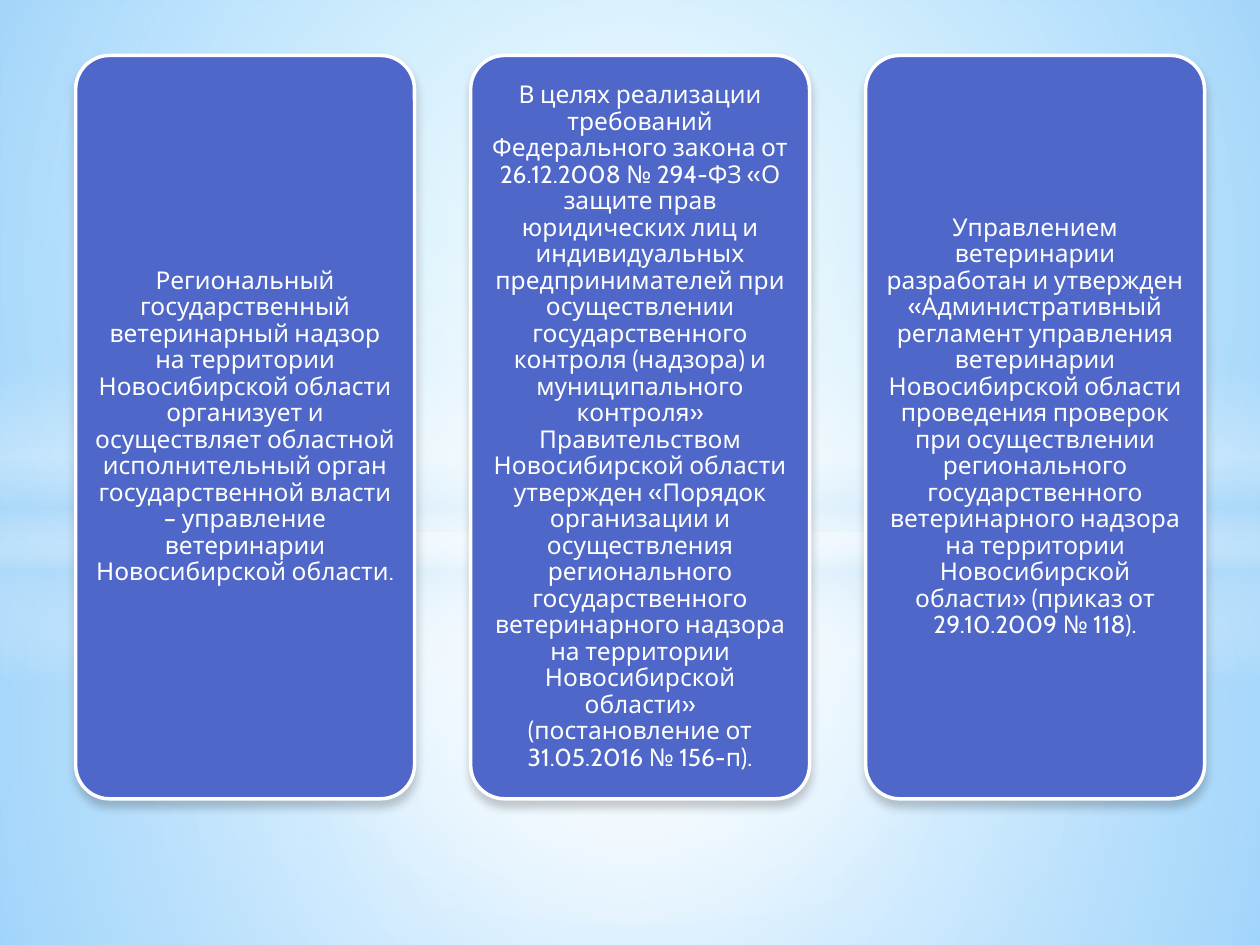
from lxml import etree
from pptx import Presentation
from pptx.dml.color import RGBColor
from pptx.enum import shapes, text
from pptx.oxml import ns
from pptx.util import Inches, Pt

WHITE = RGBColor(0xFF, 0xFF, 0xFF)
PALE = RGBColor(0xB4, 0xDC, 0xFA)
SKY_LIGHT = RGBColor(0x9E, 0xE0, 0xF8)
SKY = RGBColor(0x5B, 0xB9, 0xFF)
INDIGO = RGBColor(0x4E, 0x67, 0xC8)
BLACK = RGBColor(0, 0, 0)
CENTRE = (50, 50, 50, 50)


def add_node(parent, tag, **attributes):
    values = {name: str(value) for name, value in attributes.items()}
    return etree.SubElement(parent, ns.qn(tag), values)


def paint_gradient(owner, stops, focus=None):
    solid = next(owner.element.iter(ns.qn("a:solidFill")))
    holder = solid.getparent()
    gradient = add_node(holder, "a:gradFill", rotWithShape=1)
    holder.replace(solid, gradient)
    stop_list = add_node(gradient, "a:gsLst")
    for position, color, opacity in stops:
        stop = add_node(stop_list, "a:gs", pos=position * 1000)
        tint = add_node(stop, "a:srgbClr", val=color)
        if opacity < 100:
            add_node(tint, "a:alpha", val=opacity * 1000)
    if focus:
        circle = add_node(gradient, "a:path", path="circle")
        sides = {side: value * 1000 for side, value in zip("ltrb", focus)}
        add_node(circle, "a:fillToRect", **sides)
    else:
        add_node(gradient, "a:lin", ang=90 * 60000, scaled=0)


deck = Presentation()
deck.slide_width = Inches(10)
deck.slide_height = Inches(7.5)
page = deck.slides.add_slide(deck.slide_layouts[6])

page.background.fill.solid()
page.background.fill.fore_color.rgb = SKY
paint_gradient(page, [(0, SKY_LIGHT, 100), (100, SKY, 100)], (20, 10, 20, 60))

RECTANGLE = shapes.MSO_SHAPE.RECTANGLE
OVAL = shapes.MSO_SHAPE.OVAL
glows = [
    (RECTANGLE, 4.23, 3.27, CENTRE, [(0, WHITE, 91), (37, WHITE, 76), (100, PALE, 79)]),
    (RECTANGLE, 0, 4.23, CENTRE, [(0, WHITE, 89), (48, WHITE, 62), (100, PALE, 79)]),
    (RECTANGLE, 2.9, 2.5, None, [(0, WHITE, 0), (29, WHITE, 30), (45, PALE, 40),
                                 (55, WHITE, 26), (65, PALE, 60), (100, WHITE, 0)]),
    (OVAL, 1.75, 5.58, CENTRE, [(0, WHITE, 100), (54, WHITE, 0)]),
]
for kind, top, height, focus, stops in glows:
    glow = page.shapes.add_shape(kind, 0, Inches(top), Inches(10), Inches(height))
    glow.shadow.inherit = False
    glow.line.fill.background()
    glow.fill.solid()
    glow.fill.fore_color.rgb = WHITE
    paint_gradient(glow, stops, focus)

statements = [
    "Региональный государственный ветеринарный надзор на территории "
    "Новосибирской области организует и осуществляет областной исполнительный "
    "орган государственной власти – управление ветеринарии Новосибирской области.",
    "В целях реализации требований Федерального закона от 26.12.2008 № 294-ФЗ "
    "«О защите прав юридических лиц и индивидуальных предпринимателей при "
    "осуществлении государственного контроля (надзора) и муниципального контроля» "
    "Правительством Новосибирской области утвержден «Порядок организации и "
    "осуществления регионального государственного ветеринарного надзора на "
    "территории Новосибирской области» (постановление от 31.05.2016 № 156-п).",
    "Управлением ветеринарии разработан и утвержден «Административный регламент "
    "управления ветеринарии Новосибирской области проведения проверок при "
    "осуществлении регионального государственного ветеринарного надзора на "
    "территории Новосибирской области» (приказ от 29.10.2009 № 118).",
]
for column, statement in enumerate(statements):
    card = page.shapes.add_shape(
        shapes.MSO_SHAPE.ROUNDED_RECTANGLE,
        Inches(0.6 + 3.135 * column), Inches(0.44), Inches(2.69), Inches(5.9))
    card.adjustments[0] = 0.1
    card.fill.solid()
    card.fill.fore_color.rgb = INDIGO
    card.line.color.rgb = WHITE
    card.line.width = Pt(2)
    card.shadow.inherit = False
    effects = next(card.element.iter(ns.qn("a:effectLst")))
    shadow = add_node(effects, "a:outerShdw", blurRad=Pt(5), dist=Pt(4),
                      dir=90 * 60000, rotWithShape=0)
    add_node(add_node(shadow, "a:srgbClr", val=BLACK), "a:alpha", val=20000)

    frame = card.text_frame
    frame.text = statement
    frame.word_wrap = True
    frame.vertical_anchor = text.MSO_ANCHOR.MIDDLE
    frame.margin_left = frame.margin_right = Inches(0.06)
    frame.margin_top = frame.margin_bottom = Inches(0.06)
    para = frame.paragraphs[0]
    para.alignment = text.PP_ALIGN.CENTER
    para.line_spacing = 0.9
    span = para.runs[0]
    span.font.name = "Cabin"
    span.font.size = Pt(14)
    span.font.color.rgb = WHITE

deck.save("out.pptx")
